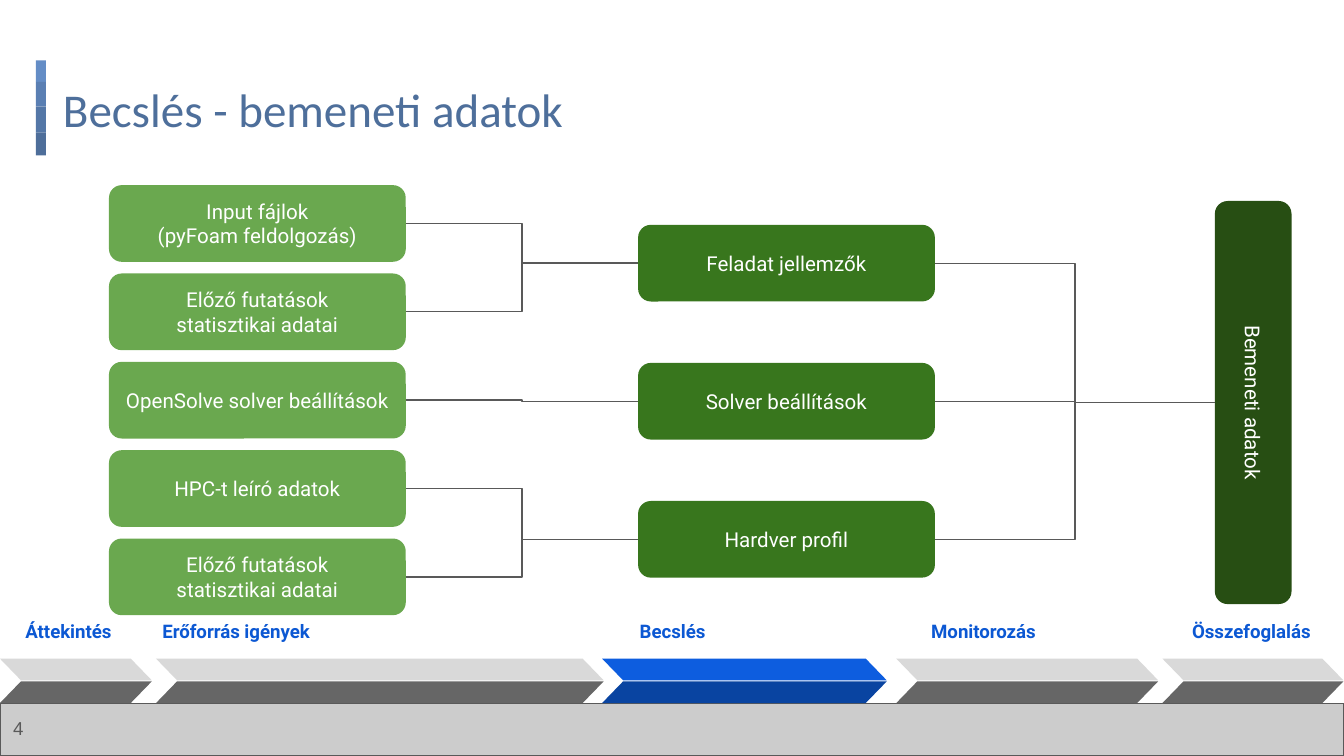
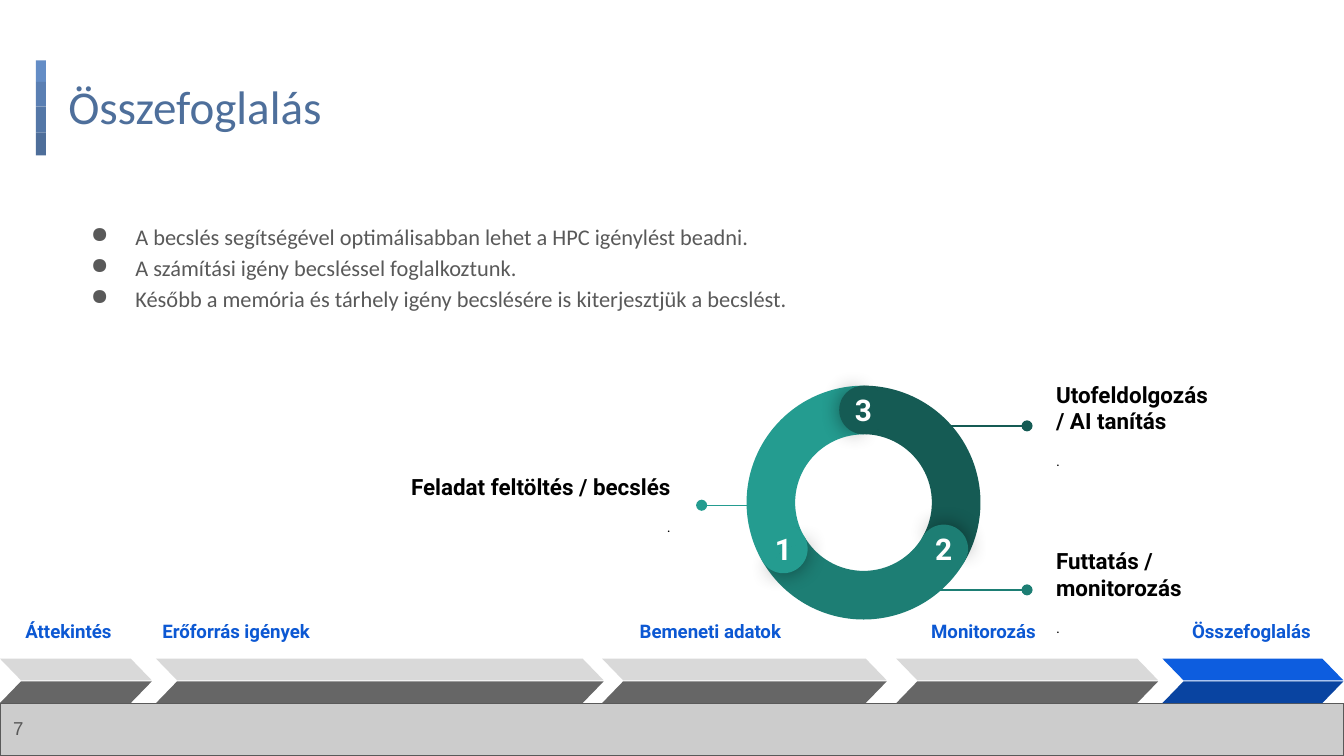
"""Build two slides on resource estimation: its inputs and the summary."""
from dataclasses import dataclass
from math import cos, radians, sin
from typing import NamedTuple

from lxml.etree import SubElement as Sub
from pptx import Presentation
from pptx.dml.color import RGBColor as Rgb
from pptx.enum.shapes import MSO_CONNECTOR as Link, MSO_SHAPE as Kind
from pptx.enum.text import MSO_ANCHOR as Anchor, MSO_AUTO_SIZE as Fit, PP_ALIGN as Align
from pptx.oxml.ns import qn
from pptx.util import Cm, Pt


@dataclass(frozen=True)
class Theme:
    band: str = "CCCCCC"
    gray: str = "595959"
    title: str = "4E6F9B"
    label: str = "0C58D3"
    white: str = "FFFFFF"
    black: str = "000000"
    idle: tuple = ("D9D9D9", "666666")
    live: tuple = ("0D5DDF", "0944A1")
    bars: tuple = ("648DC6", "5A7FB3", "5477A7", "4E6E9A")
    greens: tuple = ("6AA84F", "38761D", "274E13")
    teals: tuple = ("249C90", "1D7E74", "155B54")
    head: str = "Calibri"
    body: str = "Roboto"
    plain: str = "Arial"
    huge: float = 25.2
    big: float = 16
    mid: float = 12
    box: float = 11
    small: float = 10
    tiny: float = 8
    thin: float = 0.75


T = Theme()


class Rect(NamedTuple):
    x: float
    y: float
    w: float
    h: float


class Look(NamedTuple):
    font: str
    size: float
    color: str
    bold: bool = False


class Step(NamedTuple):
    label: str
    x: float
    w: float
    left: float
    wide: float


class Note(NamedTuple):
    text: str
    rect: Rect
    align: Align
    start: float
    end: float
    y: float
    color: str


class Node(NamedTuple):
    text: str
    angle: int
    color: str


STEPS = (
    Step("Áttekintés", 0, 2.87, 0.23, 2.41),
    Step("Erőforrás igények", 2.95, 8.46, 2.82, 8.97),
    Step("", 11.38, 5.38, 11.84, 4.55),
    Step("Monitorozás", 16.94, 4.95, 17.35, 4.19),
    Step("Összefoglalás", 21.97, 3.42, 22.28, 2.9),
)
NOTES = (
    Note("Feladat feltöltés / becslés", Rect(7.19, 8.51, 5.74, 2.06),
         Align.RIGHT, 14.27, 13.26, 9.55, T.teals[0]),
    Note("Utofeldolgozás / AI tanítás", Rect(19.71, 7.01, 3.38, 2.06),
         Align.LEFT, 17.35, 19.41, 8.05, T.teals[2]),
    Note("Futtatás / monitorozás", Rect(19.71, 10.16, 3.38, 2.06),
         Align.LEFT, 17.35, 19.41, 11.15, T.teals[1]),
)
NODES = (
    Node("3", 270, T.teals[2]),
    Node("2", 30, T.teals[1]),
    Node("1", 150, T.teals[0]),
)
SOURCES = (
    "Input fájlok\n(pyFoam feldolgozás)",
    "Előző futatások\nstatisztikai adatai",
    "OpenSolve solver beállítások",
    "HPC-t leíró adatok",
    "Előző futatások\nstatisztikai adatai",
)
GROUPS = ("Feladat jellemzők", "Solver beállítások", "Hardver profil")
FEEDS = (0, 0, 1, 2, 2)
POINTS = (
    "A becslés segítségével optimálisabban lehet a HPC igénylést beadni.",
    "A számítási igény becsléssel foglalkoztunk.",
    "Később a memória és tárhely igény becslésére is kiterjesztjük a becslést.",
)


def dress(para, look: Look) -> None:
    for run in para.runs:
        font = run.font
        font.name, font.size, font.bold = look.font, Pt(look.size), look.bold
        font.color.rgb = Rgb.from_string(look.color)


def write(shape, text: str, look: Look, align=Align.LEFT, anchor=Anchor.TOP,
          lead: float = 1, pad: float = 0.25):
    frame = shape.text_frame
    frame.text = text
    frame.word_wrap, frame.auto_size = True, Fit.NONE
    frame.vertical_anchor = anchor
    frame.margin_left = frame.margin_right = Cm(pad)
    frame.margin_top = frame.margin_bottom = Cm(pad)
    for para in frame.paragraphs:
        para.alignment, para.line_spacing = align, lead
        dress(para, look)
    return frame


def label(slide, rect: Rect, text: str, look: Look, **opts):
    return write(slide.shapes.add_textbox(*map(Cm, rect)), text, look, **opts)


def draw(slide, kind: Kind, rect: Rect, fill: str, adjust: tuple = (), turn: float = 0):
    shape = slide.shapes.add_shape(kind, *map(Cm, rect))
    shape.shadow.inherit = False
    shape.fill.solid()
    shape.fill.fore_color.rgb = Rgb.from_string(fill)
    shape.line.fill.background()
    for spot, value in enumerate(adjust):
        shape.adjustments[spot] = value
    shape.rotation = turn % 360
    return shape


def ink(line, color: str) -> None:
    line.color.rgb = Rgb.from_string(color)
    line.width = Pt(T.thin)


def wire(slide, kind: Link, color: str, ends: tuple = (0, 0, 0, 0)):
    link = slide.shapes.add_connector(kind, *map(Cm, ends))
    ink(link.line, color)
    Sub(link.element.spPr, qn("a:effectLst"))
    return link


def join(slide, start, end) -> None:
    link = wire(slide, Link.ELBOW, T.gray)
    link.begin_connect(start, 3)
    link.end_connect(end, 1)


def furnish(slide) -> None:
    band = draw(slide, Kind.RECTANGLE, Rect(0, 13.3, 25.4, 0.99), T.band)
    ink(band.line, T.gray)
    parts, top = [band], 1.14
    for color, tall in zip(T.bars, (0.41, 0.46, 0.5, 0.43)):
        parts.append(draw(slide, Kind.RECTANGLE, Rect(0.68, top, 0.19, tall), color))
        top += tall
    tree = slide.slide_layout.shapes.element
    for code, part in enumerate(parts, 50):
        part.element.nvSpPr.cNvPr.set("id", str(code))
        tree.append(part.element)


def track(slide, third: str, live: int) -> None:
    look = Look(T.body, T.small, T.label, True)
    for spot, step in enumerate(STEPS):
        label(slide, Rect(step.left, 11.53, step.wide, 0.86), step.label or third,
              look, anchor=Anchor.BOTTOM, lead=1.15)
        tints = T.live if spot == live else T.idle
        upper, _ = (draw(slide, Kind.PARALLELOGRAM, Rect(step.x, y, step.w, 0.41), tint, (0.97,))
                    for y, tint in zip((12.45, 12.88), tints))
        upper.element.spPr.find(qn("a:xfrm")).set("flipH", "1")


def start(deck, title: str, x: float, y: float, page: str):
    slide = deck.slides.add_slide(deck.slide_layouts[5])
    head = slide.shapes.title
    head.left, head.top, head.width, head.height = map(Cm, (x, y, 23.5, 1.6))
    write(head, title, Look(T.head, T.huge, T.title))
    label(slide, Rect(0, 13.34, 1.52, 0.91), page, Look(T.plain, T.small, T.gray),
          anchor=Anchor.MIDDLE, lead=0.9)
    return slide


def block(slide, rect: Rect, text: str, fill: str):
    shape = draw(slide, Kind.ROUNDED_RECTANGLE, rect, fill, (0.167,))
    write(shape, text, Look(T.body, T.box, T.white), align=Align.CENTER, anchor=Anchor.MIDDLE)
    return shape


def column(slide, texts: tuple, x: float, y: float, pitch: float, fill: str) -> list:
    return [block(slide, Rect(x, y + row * pitch, 5.61, 1.45), text, fill)
            for row, text in enumerate(texts)]


def inputs(slide) -> None:
    light, deep, dark = T.greens
    files = column(slide, SOURCES, 2.06, 3.5, 1.67, light)
    groups = column(slide, GROUPS, 12.06, 4.25, 2.61, deep)
    goal = block(slide, Rect(22.96, 3.8, 1.45, 7.62), "Bemeneti adatok", dark)
    goal.text_frame._txBody.bodyPr.set("vert", "vert")
    for item, feed in zip(files, FEEDS):
        join(slide, item, groups[feed])
    for group in groups:
        join(slide, group, goal)


def bullets(slide) -> None:
    box = slide.shapes.add_textbox(*map(Cm, Rect(1.04, 3.89, 23.5, 7.82)))
    box.text_frame.text = "\n".join(POINTS)
    for para in box.text_frame.paragraphs:
        props = para._p.get_or_add_pPr()
        props.set("marL", str(Cm(1.27)))
        props.set("indent", str(Cm(-0.84)))
        Sub(Sub(props, qn("a:buClr")), qn("a:srgbClr"), val=T.gray)
        Sub(props, qn("a:buChar"), char="●")
    frame = box.text_frame
    frame.word_wrap = True
    frame.margin_left = frame.margin_right = frame.margin_top = frame.margin_bottom = Cm(0.25)
    for para in frame.paragraphs:
        para.alignment, para.line_spacing = Align.JUSTIFY, 1.15
        dress(para, Look(T.head, T.mid, T.gray))


def callout(slide, note: Note) -> None:
    frame = label(slide, note.rect, note.text + "\n.", Look(T.body, T.mid, T.black, True),
                  align=note.align, anchor=Anchor.MIDDLE)
    dot = frame.paragraphs[1]
    dot.space_before = Pt(9.4)
    dress(dot, Look(T.body, T.tiny, T.black))
    link = wire(slide, Link.STRAIGHT, note.color, (note.start, note.y, note.end, note.y))
    Sub(link.line._get_or_add_ln(), qn("a:tailEnd"), type="oval")


def shade(shape) -> None:
    glow = Sub(shape.element.spPr.find(qn("a:effectLst")), qn("a:outerShdw"),
               blurRad=str(Pt(11.2)), algn="ctr", rotWithShape="0")
    tint = Sub(glow, qn("a:srgbClr"), val=T.black)
    Sub(tint, qn("a:alpha"), val="43000")


def sweep(first: float, last: float) -> tuple:
    return first * 0.6, last * 0.6


def ring(slide, x: float = 16.32, y: float = 9.5, size: float = 4.42) -> None:
    thick = 0.208
    cap = size * thick
    reach = (size - cap) / 2
    frame = Rect(x - size / 2, y - size / 2, size, size)
    for node in NODES:
        draw(slide, Kind.BLOCK_ARC, frame, node.color, (*sweep(210, 330), thick), node.angle + 150)
    for node in NODES:
        turn = radians(node.angle)
        spot = Rect(x + reach * cos(turn) - cap / 2, y + reach * sin(turn) - cap / 2, cap, cap)
        shade(draw(slide, Kind.PIE, spot, node.color, sweep(103, 250), node.angle + 90))
        draw(slide, Kind.PIE, spot, node.color, sweep(67, 286), node.angle - 90)
        label(slide, spot, node.text, Look(T.body, T.big, T.white, True),
              align=Align.CENTER, anchor=Anchor.MIDDLE, pad=0)


def main() -> None:
    deck = Presentation()
    deck.slide_width, deck.slide_height = Cm(25.4), Cm(14.29)
    first = start(deck, "Becslés - bemeneti adatok", 0.94, 1.27, "4")
    furnish(first)
    track(first, "Becslés", 2)
    inputs(first)
    last = start(deck, "Összefoglalás", 1.04, 1.22, "7")
    bullets(last)
    track(last, "Bemeneti adatok", 4)
    for note in NOTES:
        callout(last, note)
    ring(last)
    deck.save("out.pptx")


if __name__ == "__main__":
    main()
